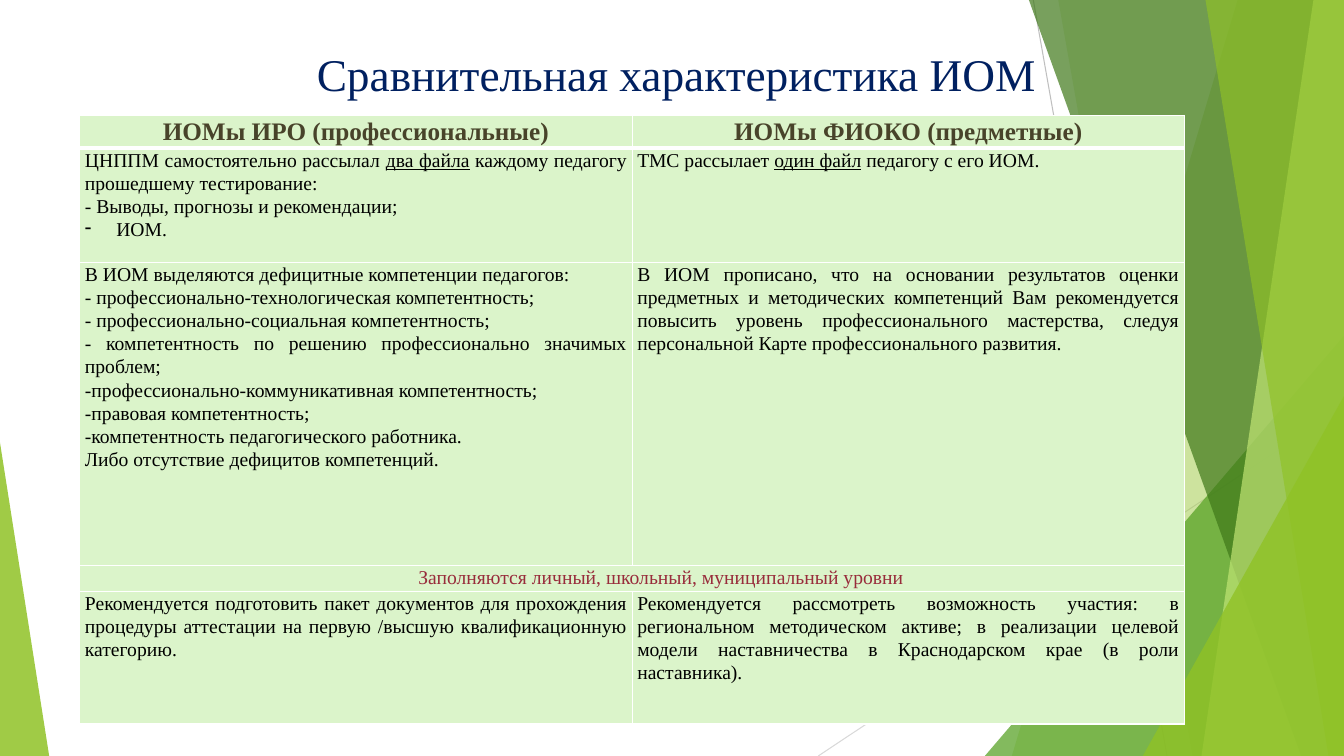
from dataclasses import dataclass

from lxml.etree import SubElement
from pptx import Presentation
from pptx.dml.color import RGBColor
from pptx.enum.shapes import MSO_CONNECTOR, MSO_SHAPE
from pptx.enum.text import MSO_ANCHOR, PP_ALIGN as Align
from pptx.oxml import parse_xml
from pptx.oxml.ns import nsdecls, qn
from pptx.util import Cm, Pt


@dataclass(frozen=True)
class Theme:
    """Colours, font and type sizes of the slide."""
    font: str = "Times New Roman"
    title: str = "002060"
    heading: str = "48432A"
    accent: str = "982C3B"
    body: str = "000000"
    cell: str = "DBF4CA"
    border: str = "FFFFFF"
    lime: str = "90C226"
    pale_lime: str = "C0E474"
    green: str = "54A021"
    dark_green: str = "3F7819"
    line: str = "BFBFBF"
    light_line: str = "D9D9D9"
    title_size: float = 32.4
    heading_size: float = 18
    body_size: float = 14


@dataclass(frozen=True)
class Box:
    """A region in centimetres."""
    left: float
    top: float
    width: float
    height: float

    def lengths(self):
        """Return the region as slide lengths."""
        return Cm(self.left), Cm(self.top), Cm(self.width), Cm(self.height)


THEME = Theme()
SLIDE = Box(0, 0, 33.87, 19.05)
TITLE = Box(2.4, 1.02, 29.29, 1.68)
TABLE = Box(2.01, 2.92, 27.84, 15.3)
ROW_HEIGHTS = (0.79, 2.87, 7.65, 0.64, 3.35)
CELL_MARGIN = 0.13
LEVELS_MARGIN = 1.59
BULLET_INDENT = 0.79

HEADINGS = ("ИОМы ИРО (профессиональные)", "ИОМы ФИОКО (предметные)")
FILES = (
    "ЦНППМ самостоятельно рассылал _два файла_ каждому педагогу прошедшему тестирование:\n"
    "- Выводы, прогнозы и рекомендации;\n"
    "•ИОМ.",
    "ТМС рассылает _один файл_ педагогу с его ИОМ.",
)
COMPETENCES = (
    "В ИОМ выделяются дефицитные компетенции педагогов:\n"
    "- профессионально-технологическая компетентность;\n"
    "- профессионально-социальная компетентность;\n"
    "- компетентность по решению профессионально значимых проблем;\n"
    "-профессионально-коммуникативная компетентность;\n"
    "-правовая компетентность;\n"
    "-компетентность педагогического работника.\n"
    "Либо отсутствие дефицитов компетенций.",
    "В ИОМ прописано, что на основании результатов оценки предметных и методических "
    "компетенций Вам рекомендуется повысить уровень профессионального мастерства, "
    "следуя персональной Карте профессионального развития.",
)
LEVELS = ("Заполняются личный, школьный, муниципальный уровни",)
ADVICE = (
    "Рекомендуется подготовить пакет документов для прохождения процедуры аттестации "
    "на первую /высшую квалификационную категорию.",
    "Рекомендуется рассмотреть возможность участия: в региональном методическом активе; "
    "в реализации целевой модели наставничества в Краснодарском крае (в роли наставника).",
)
ROWS = (HEADINGS, FILES, COMPETENCES, LEVELS, ADVICE)


def set_format(target, values):
    """Set every attribute named in values."""
    for name, value in values.items():
        setattr(target, name, value)


def add_run(paragraph, text, size, color, **extra):
    """Add a run in the slide's font."""
    run = paragraph.add_run()
    run.text = text
    set_format(run.font, {"name": THEME.font, "size": Pt(size), **extra})
    run.font.color.rgb = RGBColor.from_string(color)


def paint(shape, color, opacity):
    """Fill a shape with a translucent colour and no outline."""
    shape.shadow.inherit = False
    shape.line.fill.background()
    shape.fill.solid()
    shape.fill.fore_color.rgb = RGBColor.from_string(color)
    tint = shape.element.spPr.find(qn("a:solidFill"))[0]
    SubElement(tint, qn("a:alpha"), val=str(opacity * 1000))


def add_ray(slide, box, start, end, color):
    """Draw a thin line between two points of the box."""
    points = [Cm(value) for x, y in (start, end) for value in (box.left + x, box.top + y)]
    ray = slide.shapes.add_connector(MSO_CONNECTOR.STRAIGHT, *points)
    ray.line.width = Pt(0.75)
    ray.line.color.rgb = RGBColor.from_string(color)
    SubElement(ray._element.spPr, qn("a:effectLst"))


def add_facet(slide, box, top_x, bottom_x, color, opacity):
    """Draw a full-height facet that reaches the right edge of the box."""
    right, bottom = box.left + box.width, box.top + box.height
    corners = [(box.left + top_x, box.top), (right, box.top),
               (right, bottom), (box.left + bottom_x, bottom)]
    start, *others = [(Cm(x), Cm(y)) for x, y in corners]
    builder = slide.shapes.build_freeform(*start)
    builder.add_line_segments(others, close=True)
    paint(builder.convert_to_shape(), color, opacity)


def add_corner(slide, box, left, width, height, apex, color, opacity):
    """Draw a right triangle standing on the bottom of the box."""
    place = Box(box.left + left, box.top + box.height - height, width, height)
    corner = slide.shapes.add_shape(MSO_SHAPE.ISOSCELES_TRIANGLE, *place.lengths())
    corner.adjustments[0] = apex
    paint(corner, color, opacity)


def add_backdrop(slide, box):
    """Draw the green facets along the edges of the box."""
    add_ray(slide, box, (26.04, 0), (29.41, box.height), THEME.line)
    add_ray(slide, box, (box.width, 10.24), (20.62, box.height), THEME.light_line)
    add_facet(slide, box, 31.19, 25.5, THEME.lime, 30)
    add_facet(slide, box, 26.67, 30.05, THEME.lime, 20)
    add_corner(slide, box, 24.82, 9.05, 10.59, 1, THEME.green, 72)
    add_facet(slide, box, 25.93, 32.79, THEME.dark_green, 70)
    add_facet(slide, box, 33.1, 30.28, THEME.pale_lime, 70)
    add_facet(slide, box, 30.38, 33.48, THEME.lime, 65)
    add_corner(slide, box, 28.8, 5.07, 9.07, 1, THEME.lime, 80)
    add_corner(slide, box, 0, 1.24, 7.9, 0, THEME.lime, 85)


def add_title(slide, box):
    """Write the slide title in the box."""
    frame = slide.shapes.add_textbox(*box.lengths()).text_frame
    set_format(frame, {"word_wrap": True, "vertical_anchor": MSO_ANCHOR.MIDDLE,
                       "margin_top": 0, "margin_bottom": 0})
    frame.paragraphs[0].alignment = Align.CENTER
    add_run(frame.paragraphs[0], "Сравнительная характеристика ИОМ",
            THEME.title_size, THEME.title)


def style_cell(cell, top, bottom, left_margin):
    """Set the fill, margins and borders of a cell."""
    set_format(cell, {"margin_left": Cm(left_margin), "margin_right": Cm(CELL_MARGIN),
                      "margin_top": 0, "margin_bottom": 0})
    cell.fill.solid()
    cell.fill.fore_color.rgb = RGBColor.from_string(THEME.cell)
    properties = cell._tc.get_or_add_tcPr()
    for index, (side, width) in enumerate({"L": 1, "R": 1, "T": top, "B": bottom}.items()):
        properties.insert(index, parse_xml(
            f'<a:ln{side} {nsdecls("a")} w="{Pt(width)}"><a:solidFill>'
            f'<a:srgbClr val="{THEME.border}"/></a:solidFill></a:ln{side}>'))


def write_cell(cell, text, alignment, size, color, bold):
    """Write lines in a cell; underscores underline and • starts a bullet."""
    for index, line in enumerate(text.split("\n")):
        frame = cell.text_frame
        paragraph = frame.add_paragraph() if index else frame.paragraphs[0]
        set_format(paragraph, {"alignment": alignment, "line_spacing": 1.07})
        if line.startswith("•"):
            properties = paragraph._p.get_or_add_pPr()
            properties.set("marL", str(Cm(BULLET_INDENT)))
            properties.set("indent", str(-Cm(BULLET_INDENT)))
            SubElement(properties, qn("a:buChar"), char="-")
        for part, words in enumerate(line.lstrip("•").split("_")):
            add_run(paragraph, words, size, color, bold=bold, underline=part % 2 == 1)


def add_comparison(slide, box):
    """Place the two-column comparison table in the box."""
    table = slide.shapes.add_table(len(ROWS), 2, *box.lengths()).table
    set_format(table, {"first_row": False, "horz_banding": False})
    for column in table.columns:
        column.width = Cm(box.width / 2)
    for index, (texts, height) in enumerate(zip(ROWS, ROW_HEIGHTS)):
        table.rows[index].height = Cm(height)
        heading, merged = texts is HEADINGS, texts is LEVELS
        if merged:
            table.cell(index, 0).merge(table.cell(index, 1))
        alignment = Align.CENTER if heading or merged else Align.JUSTIFY
        size = THEME.heading_size if heading else THEME.body_size
        color = THEME.heading if heading else THEME.accent if merged else THEME.body
        for cell in table.rows[index].cells:
            style_cell(cell, 3 if index == 1 else 1, 3 if heading else 1,
                       LEVELS_MARGIN if merged else CELL_MARGIN)
        for column, text in enumerate(texts):
            write_cell(table.cell(index, column), text, alignment, size, color, heading)


def main():
    """Build and save the presentation."""
    presentation = Presentation()
    set_format(presentation, {"slide_width": Cm(SLIDE.width), "slide_height": Cm(SLIDE.height)})
    slide = presentation.slides.add_slide(presentation.slide_layouts[6])
    add_backdrop(slide, SLIDE)
    add_title(slide, TITLE)
    add_comparison(slide, TABLE)
    presentation.save("out.pptx")


if __name__ == "__main__":
    main()
